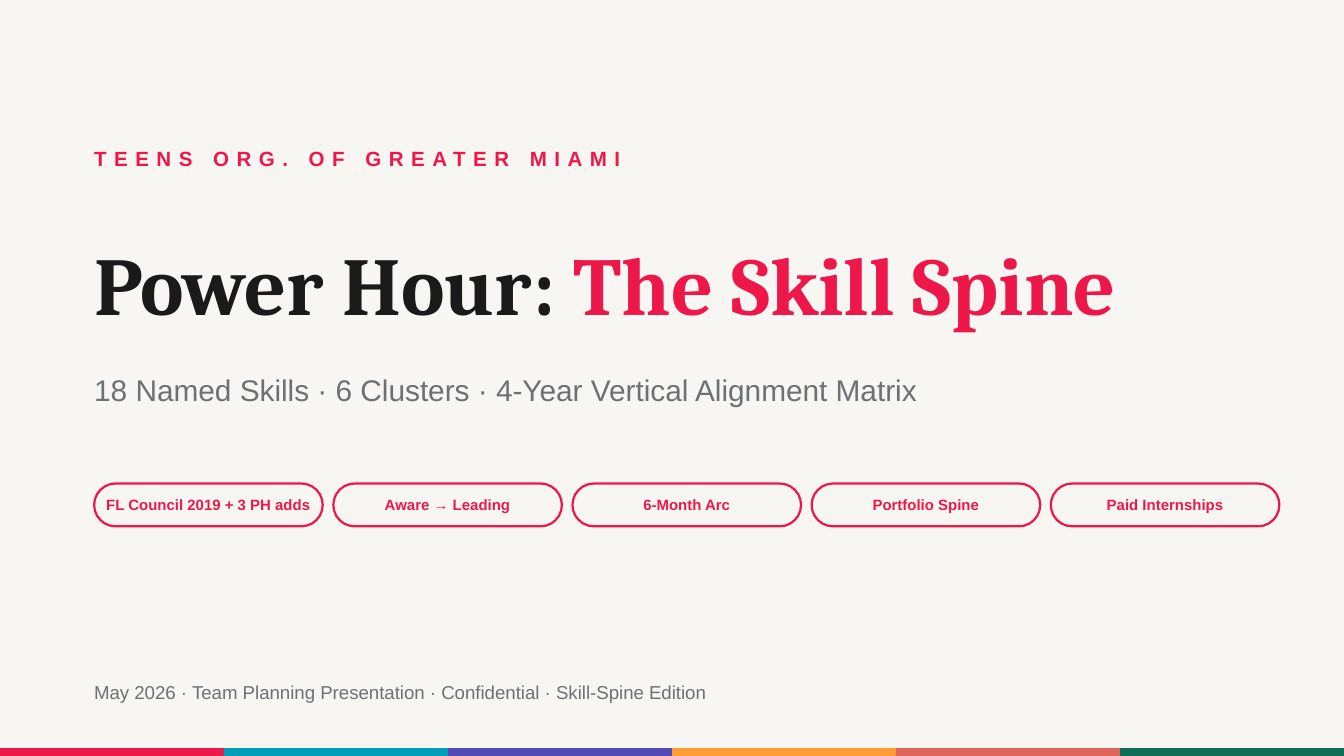
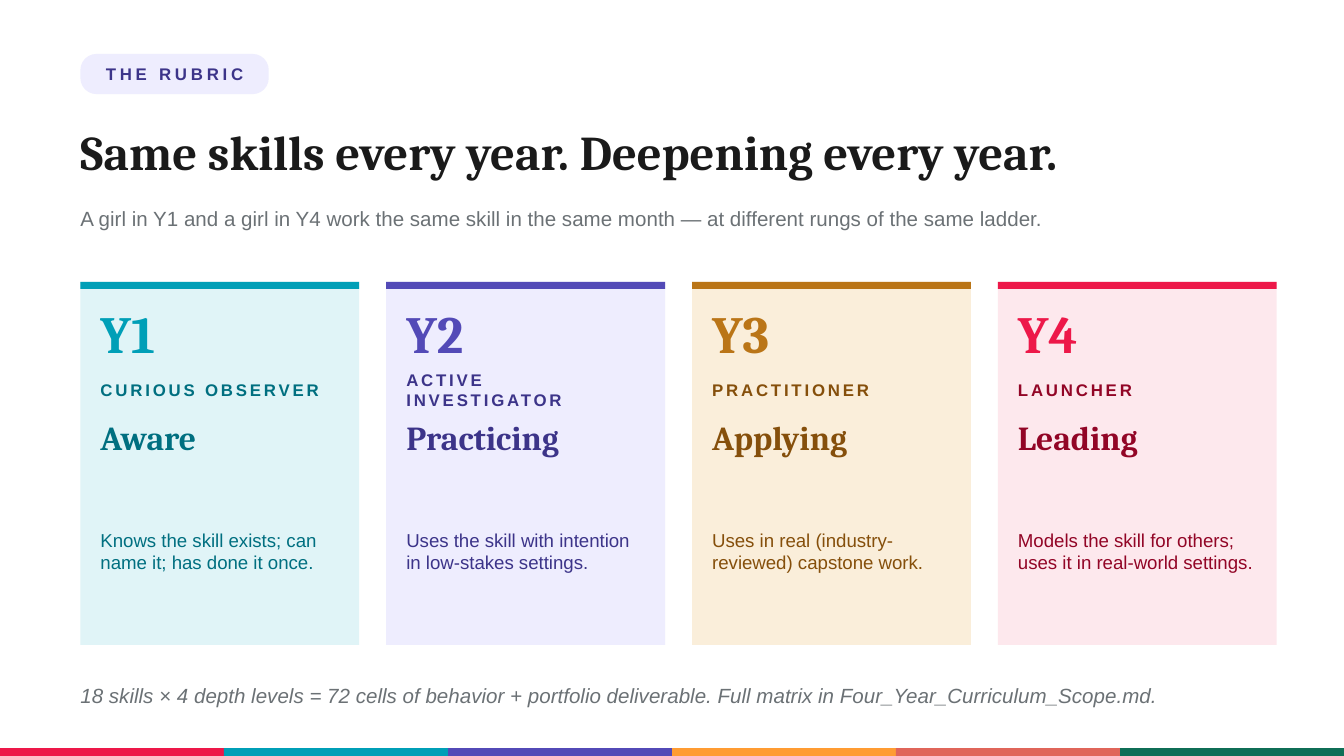
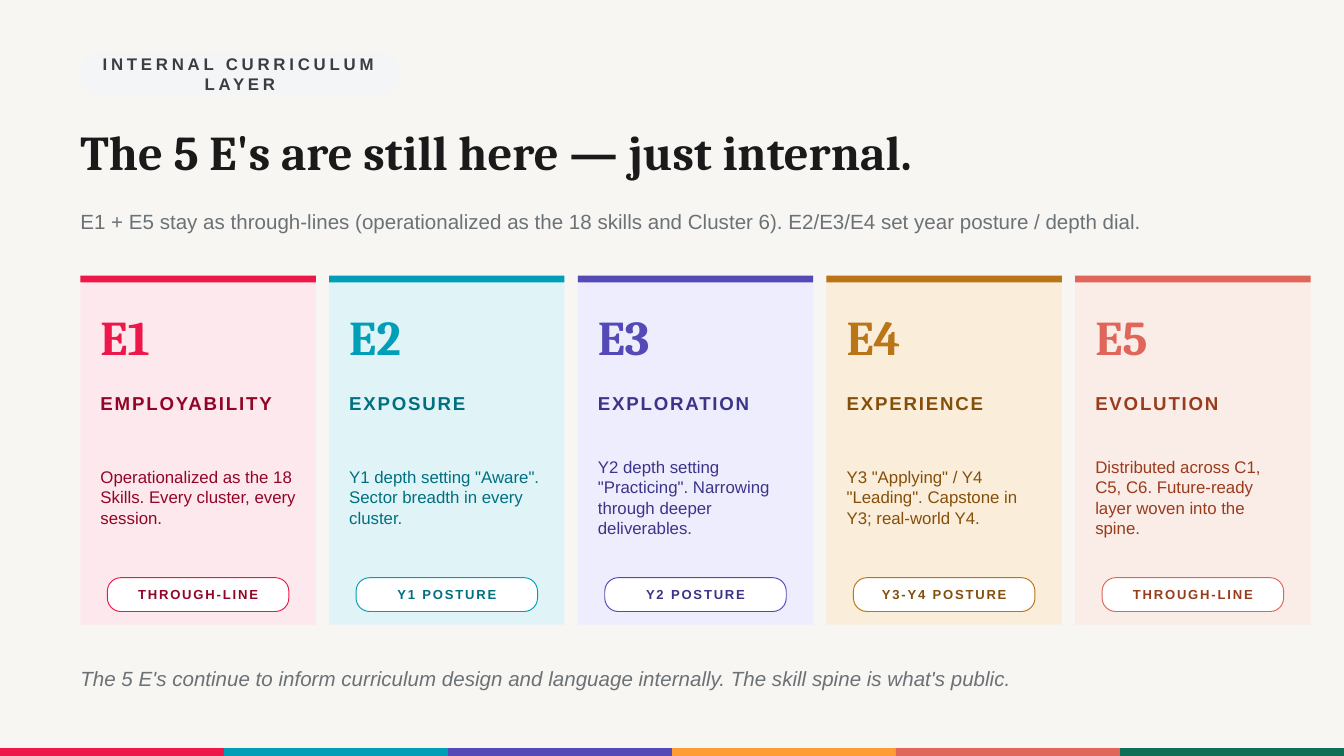
from pptx import Presentation
from pptx import util as u
from pptx.dml.color import RGBColor
from pptx.enum import shapes, text

# Shared style
SANS, SERIF = "Arial", "Cambria"
INK, GRAY, WHITE, PAPER = "1A1A1A", "6B7175", "FFFFFF", "F7F6F3"
BAND = ["ED1849", "009FB7", "534AB7", "FF9C33", "E0655A", "0F6E56"]
# Each palette: accent, dark text, pale background
PINK = ("ED1849", "920526", "FDE8ED")
TEAL = ("009FB7", "006F80", "E0F4F7")
PURPLE = ("534AB7", "3C3489", "EEEDFE")
AMBER = ("BA7517", "854F0B", "FAEEDA")
CORAL = ("E0655A", "993C1D", "FAECE7")
WIDTH, HEIGHT = 25.4, 14.29
MARGIN, COVER_MARGIN, TEXT_WIDTH = 1.52, 1.78, 22.86
CARD_PADDING = 0.38


def color(value):
    return RGBColor.from_string(value)


class Deck:
    """Holds the presentation, its style and the current slide."""

    def __init__(self):
        self.presentation = Presentation()
        self.presentation.slide_width = u.Cm(WIDTH)
        self.presentation.slide_height = u.Cm(HEIGHT)
        self.slide = None

    def new_slide(self, layout, background):
        layouts = self.presentation.slide_layouts
        self.slide = self.presentation.slides.add_slide(layouts[layout])
        fill = self.slide.background.fill
        fill.solid()
        fill.fore_color.rgb = color(background)
        self.band()

    def band(self):
        step = WIDTH / len(BAND)
        for index, tint in enumerate(BAND):
            self.box(index * step, 14.14, step, 0.15, tint)

    def set_text(self, shape, content, size, tint, font=SANS, bold=False, italic=False,
                 spacing=0, centered=False, accent=""):
        frame = shape.text_frame
        frame.word_wrap = True
        frame.auto_size = text.MSO_AUTO_SIZE.NONE
        frame.vertical_anchor = text.MSO_ANCHOR.MIDDLE
        frame.margin_left = frame.margin_right = 0
        frame.margin_top = frame.margin_bottom = 0
        frame.text = content
        paragraph = frame.paragraphs[0]
        paragraph.alignment = text.PP_ALIGN.CENTER if centered else text.PP_ALIGN.LEFT
        paragraph.space_before = u.Pt(0)
        if accent:
            paragraph.add_run().text = accent
        for run in paragraph.runs:
            run.font.name, run.font.size = font, u.Pt(size)
            run.font.bold, run.font.italic = bold, italic
            run.font.color.rgb = color(tint)
            if spacing:
                run._r.get_or_add_rPr().set("spc", str(round(spacing * 100)))
        if accent:
            paragraph.runs[-1].font.color.rgb = color(PINK[0])

    def label(self, left, top, width, height, content, size, tint, **style):
        shape = self.slide.shapes.add_textbox(u.Cm(left), u.Cm(top), u.Cm(width), u.Cm(height))
        self.set_text(shape, content, size, tint, **style)

    def placeholder(self, index, left, top, height, content, size, tint, **style):
        shape = self.slide.placeholders[index]
        shape.left, shape.top = u.Cm(left), u.Cm(top)
        shape.width, shape.height = u.Cm(TEXT_WIDTH), u.Cm(height)
        self.set_text(shape, content, size, tint, **style)

    def box(self, left, top, width, height, fill, kind=shapes.MSO_SHAPE.RECTANGLE):
        shape = self.slide.shapes.add_shape(
            kind, u.Cm(left), u.Cm(top), u.Cm(width), u.Cm(height))
        shape.shadow.inherit = False
        shape.fill.solid()
        shape.fill.fore_color.rgb = color(fill)
        shape.line.fill.background()
        return shape

    def pill(self, left, top, width, height, content, size, tint, fill,
             outline=None, weight=0.5, roundness=0.4, spacing=0):
        shape = self.box(left, top, width, height, fill, shapes.MSO_SHAPE.ROUNDED_RECTANGLE)
        shape.adjustments[0] = roundness
        if outline:
            shape.line.color.rgb = color(outline)
            shape.line.width = u.Pt(weight)
        self.set_text(shape, content, size, tint, bold=True, spacing=spacing, centered=True)

    def heading(self, tag, tag_width, tag_tint, tag_fill, title, subtitle, subtitle_height):
        self.pill(MARGIN, 1.02, tag_width, 0.76, tag, 9, tag_tint, tag_fill, spacing=2)
        self.placeholder(0, MARGIN, 2.16, 1.4, title, 26, INK, font=SERIF, bold=True)
        self.label(MARGIN, 3.68, TEXT_WIDTH, subtitle_height, subtitle, 11, GRAY)

    def card(self, left, top, width, height, palette, rows):
        """Rows are (top, height, content, size, use accent colour, style)."""
        accent, dark, pale = palette
        self.box(left, top, width, height, pale)
        self.box(left, top, width, 0.13, accent)
        for row_top, row_height, content, size, is_accent, style in rows:
            self.label(left + CARD_PADDING, row_top, width - 2 * CARD_PADDING, row_height,
                       content, size, accent if is_accent else dark, **style)

    def closing_note(self, top, height, content):
        self.label(MARGIN, top, TEXT_WIDTH, height, content, 11, GRAY, italic=True)


def cover(deck):
    deck.new_slide(0, PAPER)
    deck.label(COVER_MARGIN, 2.54, TEXT_WIDTH, 0.89, "TEENS ORG. OF GREATER MIAMI",
               11, PINK[0], bold=True, spacing=4)
    deck.placeholder(0, COVER_MARGIN, 3.81, 3.05, "Power Hour: ", 44, INK,
                     font=SERIF, bold=True, accent="The Skill Spine")
    deck.placeholder(1, COVER_MARGIN, 6.86, 1.02,
                     "18 Named Skills · 6 Clusters · 4-Year Vertical Alignment Matrix", 16, GRAY)
    topics = ["FL Council 2019 + 3 PH adds", "Aware → Leading", "6-Month Arc",
              "Portfolio Spine", "Paid Internships"]
    for index, topic in enumerate(topics):
        deck.pill(COVER_MARGIN + index * 4.52, 9.14, 4.32, 0.81, topic, 8, PINK[0], PAPER,
                  outline=PINK[0], weight=1.2, roundness=0.5)
    deck.label(COVER_MARGIN, 12.7, TEXT_WIDTH, 0.76,
               "May 2026 · Team Planning Presentation · Confidential · Skill-Spine Edition",
               10, GRAY)


def rubric(deck):
    deck.new_slide(5, WHITE)
    deck.heading("THE RUBRIC", 3.56, PURPLE[1], PURPLE[2],
                 "Same skills every year. Deepening every year.",
                 "A girl in Y1 and a girl in Y4 work the same skill in the same month "
                 "— at different rungs of the same ladder.", 0.89)
    years = [
        (TEAL, "CURIOUS OBSERVER", "Aware",
         "Knows the skill exists; can name it; has done it once."),
        (PURPLE, "ACTIVE INVESTIGATOR", "Practicing",
         "Uses the skill with intention in low-stakes settings."),
        (AMBER, "PRACTITIONER", "Applying",
         "Uses in real (industry-reviewed) capstone work."),
        (PINK, "LAUNCHER", "Leading",
         "Models the skill for others; uses it in real-world settings."),
    ]
    serif = {"font": SERIF, "bold": True}
    for index, (palette, role, level, behavior) in enumerate(years):
        deck.card(MARGIN + index * 5.78, 5.33, 5.27, 6.86, palette, [
            (5.72, 1.14, f"Y{index + 1}", 28, True, serif),
            (6.99, 0.76, role, 9, False, {"bold": True, "spacing": 1.5}),
            (7.75, 1.02, level, 18, False, serif),
            (9.02, 2.79, behavior, 10, False, {}),
        ])
    deck.closing_note(12.7, 0.89, "18 skills × 4 depth levels = 72 cells of behavior + portfolio "
                      "deliverable. Full matrix in Four_Year_Curriculum_Scope.md.")


def five_es(deck):
    deck.new_slide(5, PAPER)
    deck.heading("INTERNAL CURRICULUM LAYER", 6.03, "3A3E42", "F4F5F6",
                 "The 5 E's are still here — just internal.",
                 "E1 + E5 stay as through-lines (operationalized as the 18 skills and Cluster 6). "
                 "E2/E3/E4 set year posture / depth dial.", 1.02)
    elements = [
        (PINK, "EMPLOYABILITY", "THROUGH-LINE",
         "Operationalized as the 18 Skills. Every cluster, every session."),
        (TEAL, "EXPOSURE", "Y1 POSTURE",
         'Y1 depth setting "Aware". Sector breadth in every cluster.'),
        (PURPLE, "EXPLORATION", "Y2 POSTURE",
         'Y2 depth setting "Practicing". Narrowing through deeper deliverables.'),
        (AMBER, "EXPERIENCE", "Y3-Y4 POSTURE",
         'Y3 "Applying" / Y4 "Leading". Capstone in Y3; real-world Y4.'),
        (CORAL, "EVOLUTION", "THROUGH-LINE",
         "Distributed across C1, C5, C6. Future-ready layer woven into the spine."),
    ]
    for index, (palette, name, posture, detail) in enumerate(elements):
        left = MARGIN + index * 4.7
        deck.card(left, 5.21, 4.45, 6.6, palette, [
            (5.59, 1.52, f"E{index + 1}", 26, True, {"font": SERIF, "bold": True}),
            (7.24, 0.76, name, 10, False, {"bold": True, "spacing": 1}),
            (8.13, 2.54, detail, 9, False, {}),
        ])
        deck.pill(left + 0.51, 10.92, 3.43, 0.64, posture, 7, palette[1], WHITE,
                  outline=palette[0], spacing=1)
    deck.closing_note(12.32, 1.02, "The 5 E's continue to inform curriculum design and language "
                      "internally. The skill spine is what's public.")


def main():
    deck = Deck()
    cover(deck)
    rubric(deck)
    five_es(deck)
    deck.presentation.save("out.pptx")


if __name__ == "__main__":
    main()
